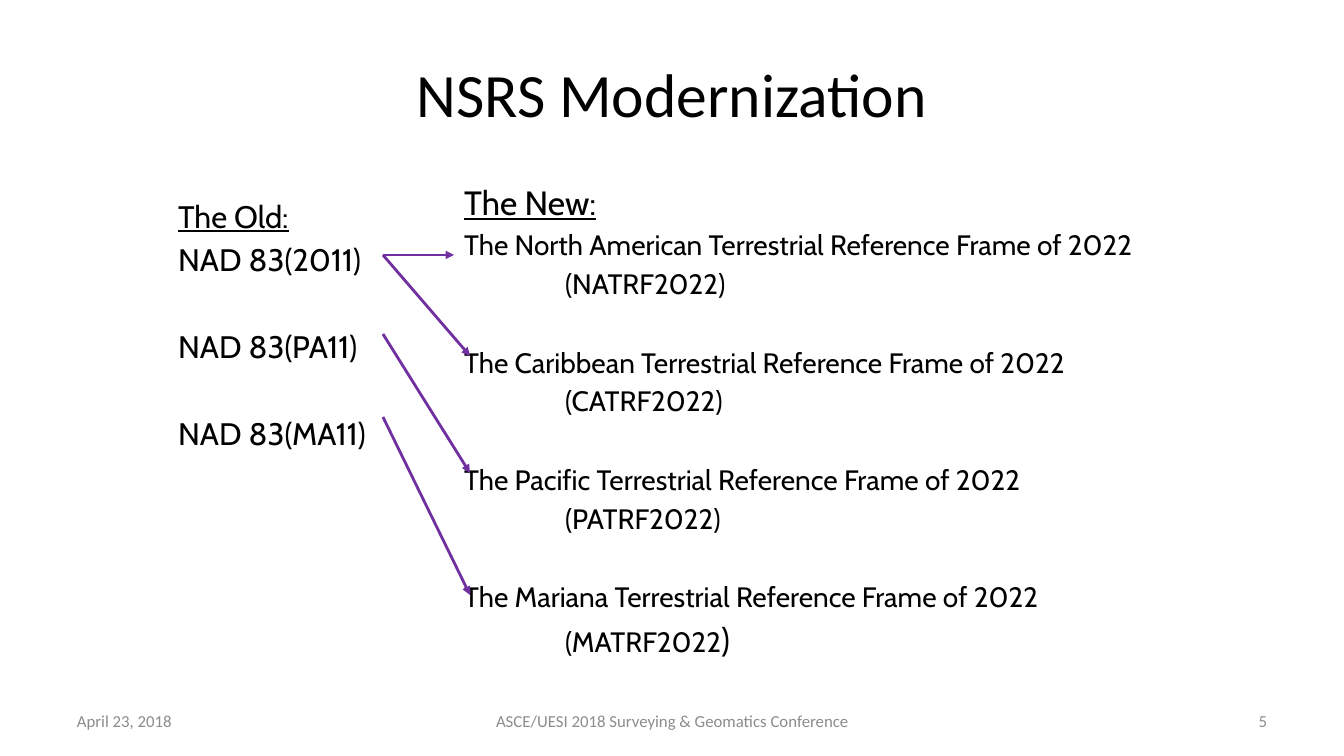
from dataclasses import dataclass

from lxml.etree import SubElement
from pptx import Presentation
from pptx.dml.color import RGBColor
from pptx.enum.shapes import MSO_CONNECTOR
from pptx.enum.text import MSO_ANCHOR, MSO_AUTO_SIZE, PP_ALIGN
from pptx.oxml.ns import qn
from pptx.util import Emu, Pt


@dataclass(frozen=True)
class Theme:
    ink: str = "000000"
    gray: str = "8C8C8C"
    arrow: str = "7030A0"
    head: str = "Calibri"
    body: str = "Cabin"
    title: float = 44
    old: float = 22.2
    new: float = 20
    top: float = 24
    foot: float = 12
    line: float = 1.22   # line height of the body font
    gap: float = 0.19    # space before a row, as a share of its size


# Content
TITLE = "NSRS Modernization"
OLD_HEAD = "The Old:"
OLD = ["NAD 83(2011)", "NAD 83(PA11)", "NAD 83(MA11)"]
NEW_HEAD = "The New:"
NEW = [
    ("The North American Terrestrial Reference Frame of 2022", "(NATRF2022", ")"),
    ("The Caribbean Terrestrial Reference Frame of 2022", "(CATRF2022", ")"),
    ("The Pacific Terrestrial Reference Frame of 2022", "(PATRF2022", ")"),
    ("The Mariana Terrestrial Reference Frame of 2022", "(MATRF2022", ")"),
]
FOOT = [
    ("April 23, 2018", 67, 314, PP_ALIGN.LEFT),
    ("ASCE/UESI 2018 Surveying & Geomatics Conference", 460, 425, PP_ALIGN.CENTER),
    ("5", 964, 313, PP_ALIGN.RIGHT),
]
ARROWS = [  # start y, end x, end y
    (255, 454, 255),
    (255, 470, 356),
    (334, 470, 473),
    (417, 470, 595),
]
FROM_X = 383
TAB = 101

theme = Theme()


def px(n):
    return Emu(round(n * 914400 / 100.8))


def place(shape, x, y, w, h, anchor):
    shape.left, shape.top, shape.width, shape.height = map(px, (x, y, w, h))
    frame = shape.text_frame
    frame.word_wrap = True
    frame.auto_size = MSO_AUTO_SIZE.NONE
    frame.vertical_anchor = anchor
    return frame


def style(run, size, face, color=theme.ink, under=False):
    font = run.font
    font.size, font.name, font.underline = Pt(size), face, under
    font.color.rgb = RGBColor.from_string(color)


def row(frame, text, size, first=False, skip=False, indent=0):
    para = frame.paragraphs[0] if first else frame.add_paragraph()
    para.text = text
    props = para._p.get_or_add_pPr()
    props.set("marL", str(px(indent)))
    props.set("indent", "0")
    SubElement(props, qn("a:buNone"))
    before = theme.gap + (theme.line + theme.gap if skip else 0)
    para.space_before = Pt(0 if first else round(size * before, 1))
    style(para.runs[0], size, theme.body, under=first)
    return para


deck = Presentation()
deck.slide_width, deck.slide_height = px(1344), px(756)
slide = deck.slides.add_slide(deck.slide_layouts[3])
title, left, right = slide.placeholders

# Title
frame = place(title, 67, 30, 1210, 126, MSO_ANCHOR.MIDDLE)
frame.text = TITLE
frame.paragraphs[0].alignment = PP_ALIGN.CENTER
style(frame.paragraphs[0].runs[0], theme.title, theme.head)

# Old frames
frame = place(left, 168, 192, 301, 260, MSO_ANCHOR.TOP)
row(frame, OLD_HEAD, theme.old, first=True)
for i, name in enumerate(OLD):
    row(frame, name, theme.old, skip=i > 0)

# New frames, the last bracket in the heading size
frame = place(right, 454, 177, 698, 529, MSO_ANCHOR.TOP)
row(frame, NEW_HEAD, theme.top, first=True)
for i, (name, code, close) in enumerate(NEW):
    row(frame, name, theme.new, skip=i > 0)
    run = row(frame, code, theme.new, indent=TAB).add_run()
    run.text = close
    style(run, theme.top if i == len(NEW) - 1 else theme.new, theme.body)

# Footer
for text, x, w, align in FOOT:
    box = slide.shapes.add_textbox(0, 0, 0, 0)
    frame = place(box, x, 701, w, 40, MSO_ANCHOR.MIDDLE)
    frame.text = text
    frame.paragraphs[0].alignment = align
    style(frame.paragraphs[0].runs[0], theme.foot, theme.head, theme.gray)

# Arrows from old to new
for y, end_x, end_y in ARROWS:
    arrow = slide.shapes.add_connector(
        MSO_CONNECTOR.STRAIGHT, px(FROM_X), px(y), px(end_x), px(end_y))
    arrow.line.width = Pt(2)
    arrow.line.color.rgb = RGBColor.from_string(theme.arrow)
    SubElement(arrow.line._get_or_add_ln(), qn("a:tailEnd"), type="triangle")
    SubElement(arrow._element.spPr, qn("a:effectLst"))

deck.save("out.pptx")
